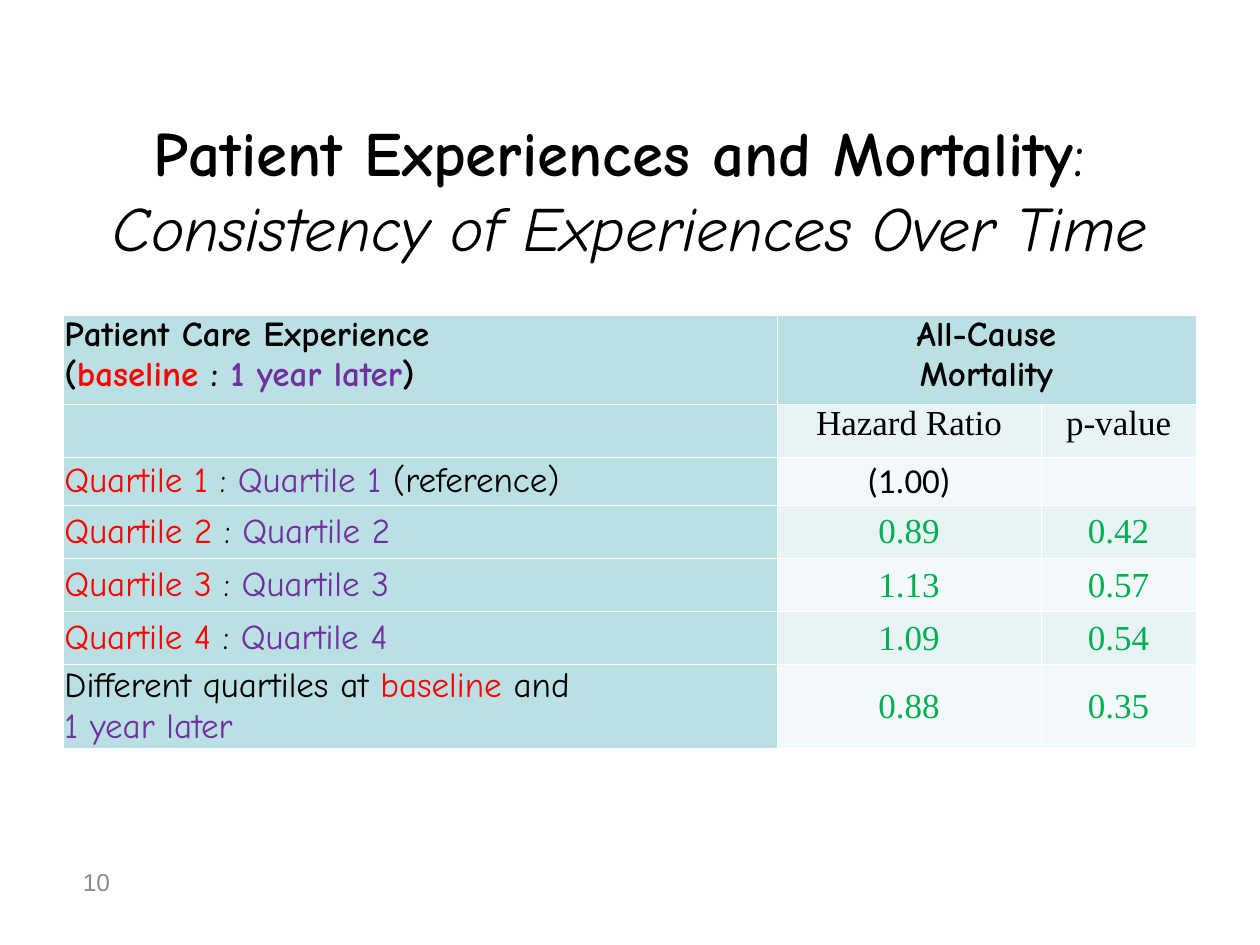
from lxml import etree
from pptx import Presentation
from pptx.dml.color import RGBColor
from pptx.enum.text import MSO_ANCHOR, PP_ALIGN
from pptx.oxml.ns import qn
from pptx.util import Cm, Pt

BLACK, RED, PURPLE, GREEN = "000000", "FF0000", "7030A0", "00B050"
WHITE, GRAY = "FFFFFF", "8C8C8C"
TEAL, BAND_DARK, BAND_LIGHT = "BBE0E3", "E7F3F4", "F3F9FA"
COMIC, SERIF = "Comic Neue", "Times New Roman"

COLUMN_WIDTHS = [14.4, 5.33, 3.12]
ROW_HEIGHTS = [1.8, 1.07, 0.97, 1.07, 1.07, 1.07, 1.09]
HAZARD_RATIOS = ["0.89", "1.13", "1.09", "0.88"]
P_VALUES = ["0.42", "0.57", "0.54", "0.35"]


def rgb(hex_color):
    return RGBColor.from_string(hex_color)


def set_values(target, values):
    for name, value in values.items():
        setattr(target, name, value)


def write(frame, paragraphs, align, **font_format):
    """Fill a frame; a paragraph is a list of (text, colour, overrides), "\\n" breaks the line."""
    for index, parts in enumerate(paragraphs):
        paragraph = frame.paragraphs[0] if index == 0 else frame.add_paragraph()
        paragraph.alignment = align
        for part in parts:
            if part == "\n":
                paragraph.add_line_break()
                continue
            text, color, *overrides = part
            run = paragraph.add_run()
            run.text = text
            set_values(run.font, {**font_format, **(overrides[0] if overrides else {})})
            run.font.color.rgb = rgb(color)


def add_text(slide, box, anchor, paragraphs, align, **font_format):
    frame = slide.shapes.add_textbox(*map(Cm, box)).text_frame
    set_values(frame, {"word_wrap": True, "vertical_anchor": anchor})
    write(frame, paragraphs, align, **font_format)


def add_title(slide, box):
    lines = [("Patient Experiences and Mortality", BLACK, {"bold": True}),
             (": ", BLACK), "\n",
             ("Consistency of Experiences Over Time", BLACK, {"italic": True})]
    add_text(slide, box, MSO_ANCHOR.MIDDLE, [lines], PP_ALIGN.CENTER,
             name=COMIC, size=Pt(36), bold=False)


def add_page_number(slide, box):
    add_text(slide, box, MSO_ANCHOR.TOP, [[("10", GRAY)]], PP_ALIGN.LEFT,
             name="Arial", size=Pt(14))


def add_borders(cell, color, width):
    properties = cell._tc.get_or_add_tcPr()
    for side in ("lnL", "lnR", "lnT", "lnB"):
        line = etree.SubElement(properties, qn(f"a:{side}"), w=str(Pt(width)))
        fill = etree.SubElement(line, qn("a:solidFill"))
        etree.SubElement(fill, qn("a:srgbClr"), val=color)


def quartile_label(number, note=None):
    name = f"Quartile {number}"
    label = [(name, RED), (" : ", BLACK), (f"{name} " if note else name, PURPLE)]
    return [label + ([(note, BLACK)] if note else [])]


def table_rows():
    """Rows of cells; each cell is (paragraphs, font name)."""
    empty = ([], COMIC)
    experience = [[("Patient Care Experience", BLACK)],
                  [("(", BLACK), ("baseline", RED), (" : ", BLACK),
                   ("1 year later", PURPLE), (")", BLACK)]]
    mortality = [[("All-Cause", BLACK)], [("Mortality", BLACK)]]
    changed = [[("Different quartiles at ", BLACK), ("baseline", RED), (" and", BLACK)],
               [("1 year later", PURPLE)]]
    rows = [
        [(experience, COMIC), (mortality, COMIC), empty],
        [empty, *(([[(heading, BLACK)]], SERIF) for heading in ("Hazard Ratio", "p-value"))],
        [(quartile_label(1, "(reference)"), COMIC), ([[("(1.00)", BLACK)]], "Calibri"), empty],
    ]
    labels = [quartile_label(number) for number in (2, 3, 4)] + [changed]
    for label, *results in zip(labels, HAZARD_RATIOS, P_VALUES):
        rows.append([(label, COMIC), *(([[(value, GREEN)]], SERIF) for value in results)])
    return rows


def add_mortality_table(slide, left, top):
    frame = slide.shapes.add_table(
        len(ROW_HEIGHTS), len(COLUMN_WIDTHS), Cm(left), Cm(top),
        Cm(sum(COLUMN_WIDTHS)), Cm(sum(ROW_HEIGHTS)))
    table = frame.table
    set_values(table, {"first_row": False, "horz_banding": False})
    for column, width in zip(table.columns, COLUMN_WIDTHS):
        column.width = Cm(width)
    for row, height in zip(table.rows, ROW_HEIGHTS):
        row.height = Cm(height)
    table.cell(0, 1).merge(table.cell(0, 2))

    for r, row in enumerate(table_rows()):
        band = BAND_DARK if r % 2 else BAND_LIGHT
        for c, (paragraphs, font_name) in enumerate(row):
            cell = table.cell(r, c)
            set_values(cell, {
                "margin_left": Cm(0.03), "margin_right": Cm(0.05),
                "margin_top": 0, "margin_bottom": 0,
                "vertical_anchor": MSO_ANCHOR.TOP if r < 2 else MSO_ANCHOR.MIDDLE})
            add_borders(cell, WHITE, 1)
            cell.fill.solid()
            cell.fill.fore_color.rgb = rgb(TEAL if r == 0 or c == 0 else band)
            write(cell.text_frame, paragraphs, PP_ALIGN.CENTER if c else PP_ALIGN.LEFT,
                  name=font_name, size=Pt(20), bold=r == 0)


def main():
    presentation = Presentation()
    set_values(presentation, {"slide_width": Cm(25.4), "slide_height": Cm(19.05)})
    slide = presentation.slides.add_slide(presentation.slide_layouts[6])
    add_title(slide, (0, 1.9, 25.4, 3.81))
    add_mortality_table(slide, 1.27, 6.35)
    add_page_number(slide, (1.42, 17.35, 6.65, 1.32))
    presentation.save("out.pptx")


if __name__ == "__main__":
    main()
